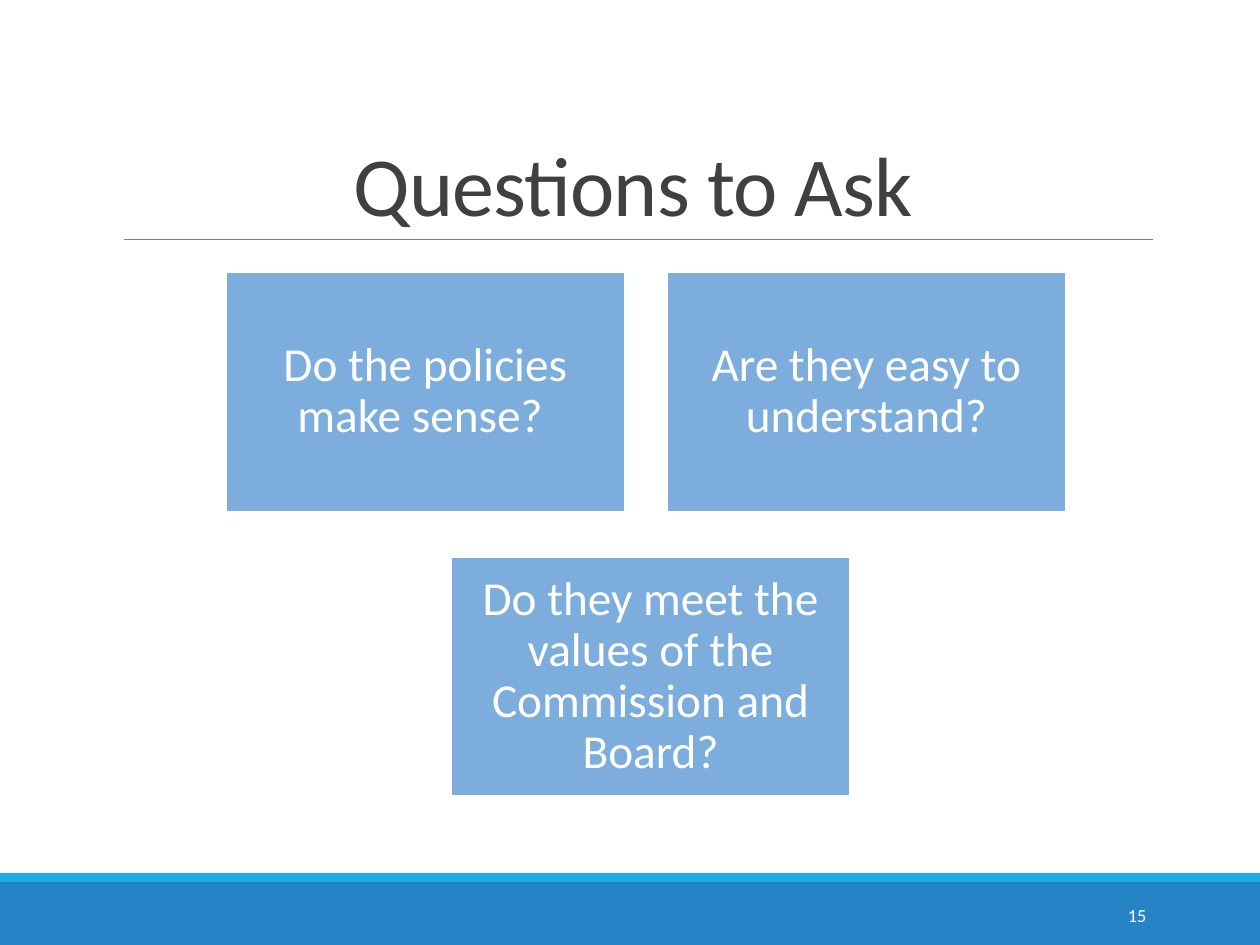
from pptx import Presentation
from pptx.dml.color import RGBColor
from pptx.enum.shapes import MSO_CONNECTOR, MSO_SHAPE
from pptx.enum.text import MSO_ANCHOR, MSO_AUTO_SIZE, PP_ALIGN
from pptx.oxml.ns import qn
from pptx.util import Cm, Pt
from lxml import etree

RECT = MSO_SHAPE.RECTANGLE
STRAIGHT = MSO_CONNECTOR.STRAIGHT
MIDDLE, BOTTOM = MSO_ANCHOR.MIDDLE, MSO_ANCHOR.BOTTOM
CENTER, RIGHT = PP_ALIGN.CENTER, PP_ALIGN.RIGHT
NO_AUTOFIT = MSO_AUTO_SIZE.NONE
TITLE_ONLY = 5

WIDTH, HEIGHT = 25.4, 19.05
BAR_TOP, STRIPE = 17.78, 0.18
BOX_W, BOX_H = 8.05, 4.83
QUESTIONS = [
    ("Do the policies make sense? ", 4.55, 5.49),
    ("Are they easy to understand?", 13.44, 5.49),
    ("Do they meet the values of the Commission and Board?", 9.09, 11.23),
]


def rgb(value):
    return RGBColor.from_string(value)


class SlideBuilder:
    font = "Calibri"
    dark, white, gray = "404040", "FFFFFF", "808080"
    bar_fill, stripe_fill, box_fill = "2683C6", "1CADE4", "7CADDD"

    def __init__(self, prs):
        self.slide = prs.slides.add_slide(prs.slide_layouts[TITLE_ONLY])

    def set_text(self, sp, text, size, color, align, anchor, spacing=1.0):
        tf = sp.text_frame
        tf.word_wrap = True
        tf.auto_size = NO_AUTOFIT
        tf.vertical_anchor = anchor
        p = tf.paragraphs[0]
        p.text = text
        p.alignment = align
        p.line_spacing = spacing
        p.font.name = self.font
        p.font.size = Pt(size)
        p.font.color.rgb = rgb(color)
        return tf

    def title(self, text, x, y, w, h):
        sp = self.slide.shapes.title
        sp.left, sp.top, sp.width, sp.height = Cm(x), Cm(y), Cm(w), Cm(h)
        tf = self.set_text(sp, text, 48, self.dark, CENTER, BOTTOM, 0.85)
        r = tf.paragraphs[0].runs[0]
        r._r.get_or_add_rPr().set("spc", "-50")

    def rect(self, x, y, w, h, fill, line=None):
        sp = self.slide.shapes.add_shape(RECT, Cm(x), Cm(y), Cm(w), Cm(h))
        sp.shadow.inherit = False
        sp.fill.solid()
        sp.fill.fore_color.rgb = rgb(fill)
        if line:
            sp.line.color.rgb = rgb(line)
            sp.line.width = Pt(1.25)
        else:
            sp.line.fill.background()
        return sp

    def question(self, text, x, y):
        sp = self.rect(x, y, BOX_W, BOX_H, self.box_fill, self.white)
        tf = self.set_text(sp, text, 27, self.white, CENTER, MIDDLE, 0.9)
        tf.margin_left = tf.margin_right = Cm(0.28)
        tf.margin_top = tf.margin_bottom = Cm(0.28)

    def rule(self, x1, x2, y):
        line = self.slide.shapes.add_connector(STRAIGHT, Cm(x1), Cm(y), Cm(x2), Cm(y))
        line.line.color.rgb = rgb(self.gray)
        line.line.width = Pt(0.5)
        etree.SubElement(line._element.spPr, qn("a:effectLst"))

    def page_number(self, text, x, y, w, h):
        sp = self.slide.shapes.add_textbox(Cm(x), Cm(y), Cm(w), Cm(h))
        self.set_text(sp, text, 10.5, self.white, RIGHT, MIDDLE)


def main():
    prs = Presentation()
    prs.slide_width, prs.slide_height = Cm(WIDTH), Cm(HEIGHT)
    s = SlideBuilder(prs)
    s.rect(0, BAR_TOP, WIDTH, HEIGHT - BAR_TOP, s.bar_fill)
    s.rect(0, BAR_TOP - STRIPE, WIDTH, STRIPE, s.stripe_fill)
    s.rule(2.49, 23.24, 4.83)
    s.title("Questions to Ask", 2.29, 0.79, 20.96, 4.04)
    s.page_number("15", 20.62, 17.93, 2.74, 1.02)
    for text, x, y in QUESTIONS:
        s.question(text, x, y)
    prs.save("out.pptx")


if __name__ == "__main__":
    main()
